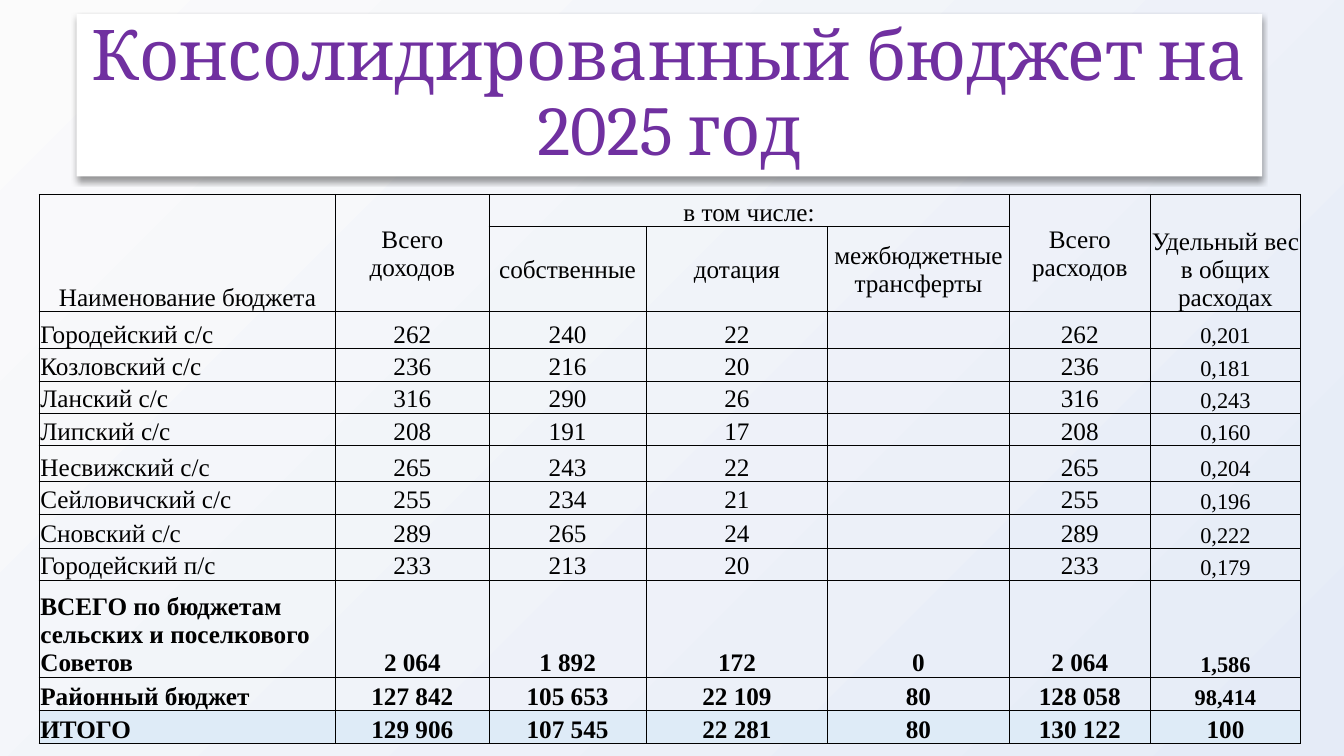
import dataclasses

import lxml.etree
import pptx
import pptx.dml.color
import pptx.enum.shapes
import pptx.enum.text
import pptx.oxml.ns
import pptx.presentation
import pptx.slide
import pptx.table
import pptx.text.text
import pptx.util

Inches = pptx.util.Inches
Pt = pptx.util.Pt
qn = pptx.oxml.ns.qn
ALIGN = pptx.enum.text.PP_ALIGN
ANCHOR = pptx.enum.text.MSO_ANCHOR

TABLE_FONT = "Times New Roman"
BLACK = "000000"
COLUMN_WIDTHS = [2.94, 1.52, 1.56, 1.8, 1.8, 1.4, 1.49]
ROW_HEIGHTS = [0.32, 0.68, 0.37, 0.32, 0.32, 0.32, 0.36, 0.32, 0.34, 0.32, 0.96, 0.33, 0.33]
HEADER_ROWS = 2
THICK_ROW_EDGES = {0, HEADER_ROWS, len(ROW_HEIGHTS) - 1, len(ROW_HEIGHTS)}
THICK_COLUMN_EDGES = {0, len(COLUMN_WIDTHS)}


@dataclasses.dataclass(frozen=True)
class Heading:
    row: int
    column: int
    label: str
    anchor: ANCHOR = ANCHOR.MIDDLE
    row_span: int = 1
    column_span: int = 1


@dataclasses.dataclass(frozen=True)
class Budget:
    name: str
    income: str
    own: str
    subsidy: str
    transfers: str
    expenses: str
    share: str
    bold: bool = False
    fill: str = ""
    share_size: int = 16


HEADINGS = [
    Heading(0, 0, "Наименование бюджета", ANCHOR.BOTTOM, row_span=2),
    Heading(0, 1, "Всего доходов", row_span=2),
    Heading(0, 2, "в том числе:", ANCHOR.BOTTOM, column_span=3),
    Heading(0, 5, "Всего расходов", row_span=2),
    Heading(0, 6, "Удельный вес в общих расходах", ANCHOR.BOTTOM, row_span=2),
    Heading(1, 2, "собственные"),
    Heading(1, 3, "дотация"),
    Heading(1, 4, "межбюджетные трансферты"),
]

BUDGETS = [
    Budget("Городейский с/с", "262", "240", "22", "", "262", "0,201"),
    Budget("Козловский с/с", "236", "216", "20", "", "236", "0,181"),
    Budget("Ланский с/с", "316", "290", "26", "", "316", "0,243"),
    Budget("Липский с/с", "208", "191", "17", "", "208", "0,160"),
    Budget("Несвижский с/с", "265", "243", "22", "", "265", "0,204"),
    Budget("Сейловичский с/с", "255", "234", "21", "", "255", "0,196"),
    Budget("Сновский с/с", "289", "265", "24", "", "289", "0,222"),
    Budget("Городейский п/с", "233", "213", "20", "", "233", "0,179"),
    Budget("ВСЕГО по бюджетам сельских и поселкового Советов",
           "2 064", "1 892", "172", "0", "2 064", "1,586", bold=True),
    Budget("Районный бюджет",
           "127 842", "105 653", "22 109", "80", "128 058", "98,414", bold=True),
    Budget("ИТОГО", "129 906", "107 545", "22 281", "80", "130 122", "100",
           bold=True, fill="DEEBF7", share_size=18),
]


def rgb(value: str) -> pptx.dml.color.RGBColor:
    return pptx.dml.color.RGBColor.from_string(value)


def format_paragraph(paragraph: pptx.text.text._Paragraph, align: ALIGN, font: str,
                     size: int, color: str, bold: bool = False) -> None:
    paragraph.alignment = align
    for run in paragraph.runs:
        run.font.name = font
        run.font.size = Pt(size)
        run.font.bold = bold
        run.font.color.rgb = rgb(color)


def add_solid_fill(parent: lxml.etree._Element, color: str) -> lxml.etree._Element:
    solid = lxml.etree.SubElement(parent, qn("a:solidFill"))
    return lxml.etree.SubElement(solid, qn("a:srgbClr"), val=color)


def paint_background(slide: pptx.slide.Slide) -> None:
    fill = slide.background.fill
    fill.gradient()
    fill.gradient_angle = 135
    for stop, color in zip(fill.gradient_stops, ["E5EBF7", "FBFBFB"]):
        stop.color.rgb = rgb(color)


def add_title(slide: pptx.slide.Slide) -> None:
    title = slide.shapes.add_shape(
        pptx.enum.shapes.MSO_SHAPE.RECTANGLE,
        Inches(0.76), Inches(0.14), Inches(11.76), Inches(1.61))
    title.fill.solid()
    title.fill.fore_color.rgb = rgb("FFFFFF")
    title.line.fill.background()

    title.shadow.inherit = False
    effects = title.element.spPr.find(qn("a:effectLst"))
    shadow = lxml.etree.SubElement(
        effects, qn("a:outerShdw"), blurRad=str(Pt(4)), dist=str(Pt(3)),
        dir="5400000", algn="t", rotWithShape="0")
    shadow_color = lxml.etree.SubElement(shadow, qn("a:srgbClr"), val=BLACK)
    lxml.etree.SubElement(shadow_color, qn("a:alpha"), val="40000")

    frame = title.text_frame
    frame.word_wrap = True
    frame.vertical_anchor = ANCHOR.MIDDLE
    frame.text = "Консолидированный бюджет на 2025 год"
    heading = frame.paragraphs[0]
    heading.line_spacing = 0.9
    format_paragraph(heading, ALIGN.CENTER, "Cambria", 50, "7030A0")
    outline = lxml.etree.Element(qn("a:ln"), w=str(Pt(0.75)))
    add_solid_fill(outline, BLACK)
    heading.runs[0].font._element.insert(0, outline)


def set_borders(cell: pptx.table._Cell, row: int, column: int) -> None:
    """Draw thick lines round the table, under its header and above its total."""
    right = column + (cell.span_width if cell.is_merge_origin else 1)
    bottom = row + (cell.span_height if cell.is_merge_origin else 1)
    thick_edges = {
        "a:lnL": column in THICK_COLUMN_EDGES,
        "a:lnR": right in THICK_COLUMN_EDGES,
        "a:lnT": row in THICK_ROW_EDGES,
        "a:lnB": bottom in THICK_ROW_EDGES,
    }
    properties = cell._tc.get_or_add_tcPr()
    for tag, thick in thick_edges.items():
        border = lxml.etree.SubElement(properties, qn(tag), w=str(Pt(1 if thick else 0.5)))
        add_solid_fill(border, BLACK)


def write_cell(cell: pptx.table._Cell, text: str, align: ALIGN, anchor: ANCHOR,
               size: int = 18, bold: bool = False) -> None:
    cell.text_frame.text = text
    cell.vertical_anchor = anchor
    format_paragraph(cell.text_frame.paragraphs[0], align, TABLE_FONT, size, BLACK, bold)


def add_budget_table(slide: pptx.slide.Slide) -> None:
    table = slide.shapes.add_table(
        len(ROW_HEIGHTS), len(COLUMN_WIDTHS), Inches(0.39), Inches(1.93),
        Inches(sum(COLUMN_WIDTHS)), Inches(sum(ROW_HEIGHTS))).table
    table.first_row = False
    table.horz_banding = False
    for column, width in zip(table.columns, COLUMN_WIDTHS):
        column.width = Inches(width)
    for row, height in zip(table.rows, ROW_HEIGHTS):
        row.height = Inches(height)

    for heading in HEADINGS:
        cell = table.cell(heading.row, heading.column)
        if heading.row_span > 1 or heading.column_span > 1:
            cell.merge(table.cell(heading.row + heading.row_span - 1,
                                  heading.column + heading.column_span - 1))
        write_cell(cell, heading.label, ALIGN.CENTER, heading.anchor)

    for row, budget in enumerate(BUDGETS, start=HEADER_ROWS):
        write_cell(table.cell(row, 0), budget.name, ALIGN.LEFT, ANCHOR.BOTTOM, bold=budget.bold)
        amounts = [budget.income, budget.own, budget.subsidy, budget.transfers, budget.expenses]
        for column, amount in enumerate(amounts, start=1):
            write_cell(table.cell(row, column), amount, ALIGN.CENTER, ANCHOR.BOTTOM,
                       bold=budget.bold)
        write_cell(table.cell(row, 6), budget.share, ALIGN.CENTER, ANCHOR.BOTTOM,
                   budget.share_size, budget.bold)

    row_fills = [""] * HEADER_ROWS + [budget.fill for budget in BUDGETS]
    for row, fill in enumerate(row_fills):
        for column in range(len(COLUMN_WIDTHS)):
            cell = table.cell(row, column)
            cell.margin_left = cell.margin_right = cell.margin_top = Inches(0.01)
            cell.margin_bottom = 0
            set_borders(cell, row, column)
            if fill:
                cell.fill.solid()
                cell.fill.fore_color.rgb = rgb(fill)
            else:
                cell.fill.background()


def main() -> None:
    presentation = pptx.Presentation()
    presentation.slide_width = Inches(13.33)
    presentation.slide_height = Inches(7.5)
    slide = presentation.slides.add_slide(presentation.slide_layouts[6])
    paint_background(slide)
    add_title(slide)
    add_budget_table(slide)
    presentation.save("out.pptx")


if __name__ == "__main__":
    main()
